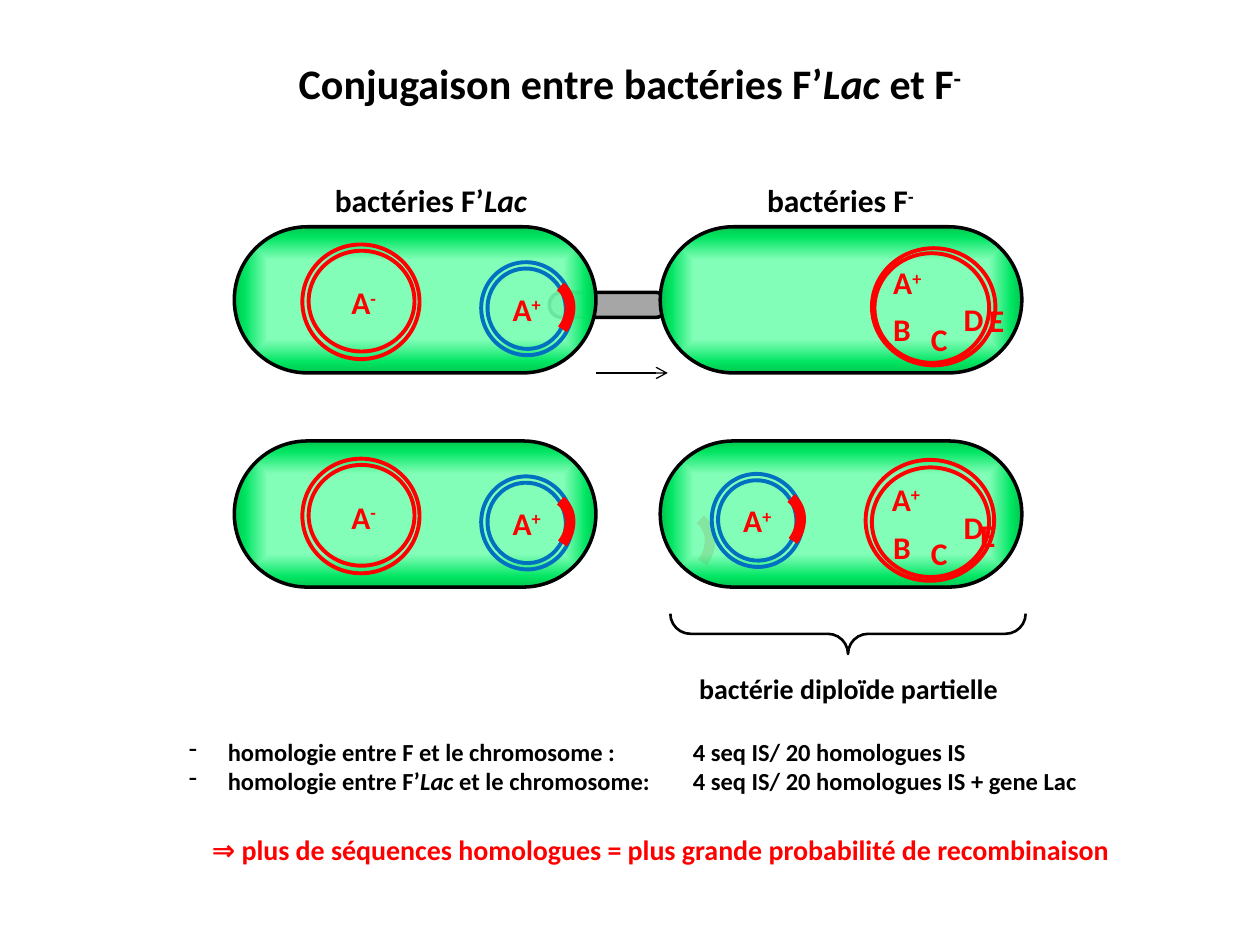
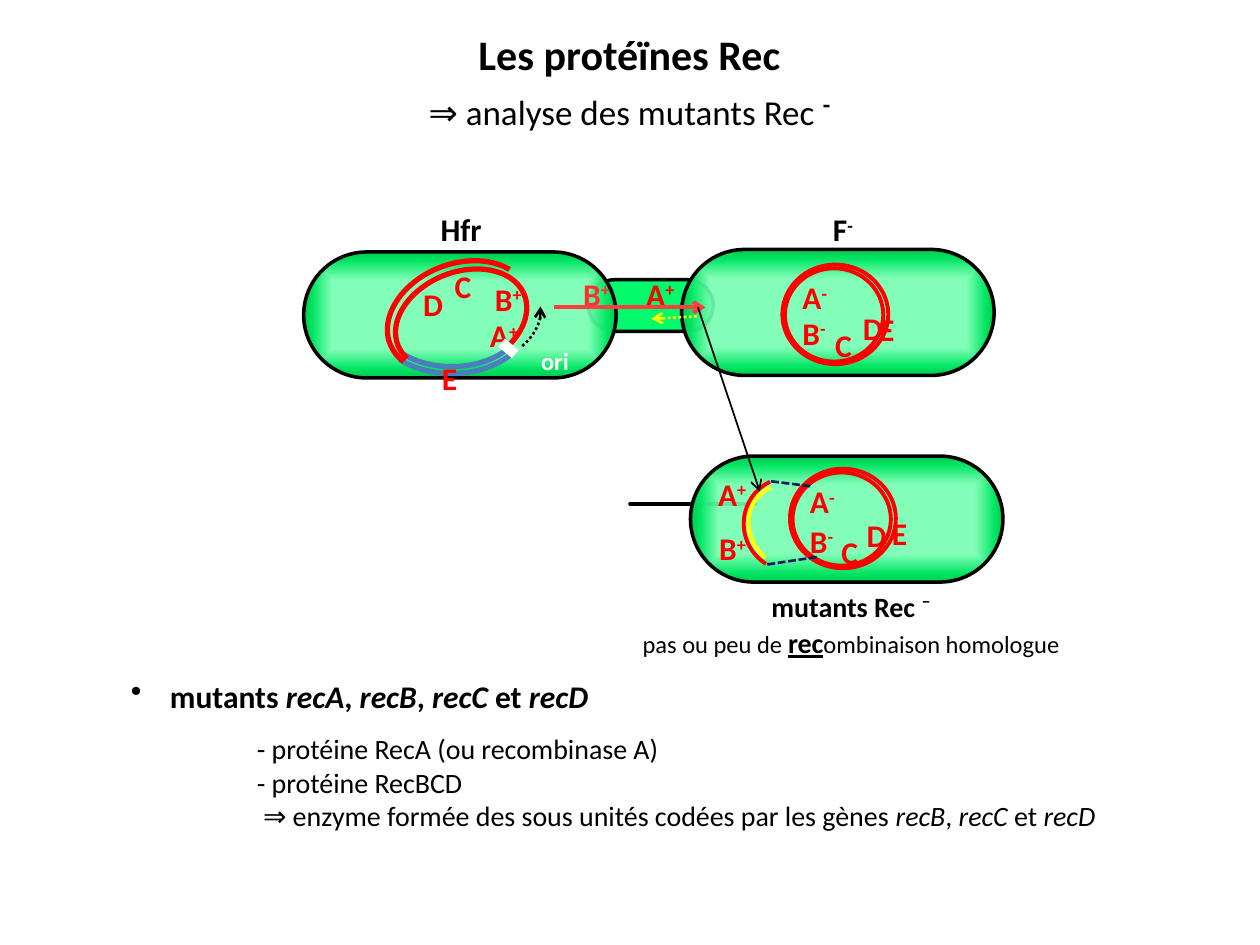
"""Build two slides on bacterial conjugation and Rec mutants."""
from pptx import Presentation
from pptx import util as u
from pptx.dml.color import RGBColor
from pptx.enum import dml, shapes, text
from pptx.oxml import parse_xml
from pptx.oxml.ns import qn
from lxml import etree

CELL = u.Inches(1)
COLS, ROWS = 10, 7.5
FONT = "Calibri"
BLACK = RGBColor(0x00, 0x00, 0x00)
WHITE = RGBColor(0xFF, 0xFF, 0xFF)
RED = RGBColor(0xFF, 0x00, 0x00)
PALE_RED = RGBColor(0xFF, 0x2F, 0x2F)
STRAND_RED = RGBColor(0xFF, 0x3F, 0x3F)
BLUE = RGBColor(0x00, 0x70, 0xC0)
STEEL = RGBColor(0x4B, 0x7E, 0xBC)
NAVY = RGBColor(0x00, 0x20, 0x60)
YELLOW = RGBColor(0xFF, 0xFF, 0x00)
GREY = RGBColor(0xA6, 0xA6, 0xA6)
GREEN = RGBColor(0x00, 0xFA, 0x6B)
CYTOPLASM = (
    '<a:gradFill xmlns:a="http://schemas.openxmlformats.org/drawingml/2006/main" rotWithShape="1"><a:gsLst>'
    '<a:gs pos="54000"><a:srgbClr val="77FFB2"><a:alpha val="90000"/></a:srgbClr></a:gs>'
    '<a:gs pos="85000"><a:srgbClr val="00E663"/></a:gs><a:gs pos="96000"><a:srgbClr val="00D054"/></a:gs>'
    '</a:gsLst><a:path path="shape"><a:fillToRect l="50000" t="50000" r="50000" b="50000"/></a:path></a:gradFill>')
OVAL, ARC, PILL, BRACE = (shapes.MSO_SHAPE.OVAL, shapes.MSO_SHAPE.ARC,
                          shapes.MSO_SHAPE.ROUNDED_RECTANGLE, shapes.MSO_SHAPE.LEFT_BRACE)
DOT, DASH = dml.MSO_LINE.ROUND_DOT, dml.MSO_LINE.SQUARE_DOT
LEFT, CENTER, JUSTIFY = text.PP_ALIGN.LEFT, text.PP_ALIGN.CENTER, text.PP_ALIGN.JUSTIFY
SUP, ITALIC = {"sup": True}, {"italic": True}


def write(s, box, *runs, tf=None, size=18, color=BLACK, bold=True, align=LEFT,
          bullet=None, margin=0, tab=None, before=0, spacing=None):
    """Write one paragraph in a new box, or after the others in tf."""
    if tf is None:
        tf = s.shapes.add_textbox(*[int(v * CELL) for v in box]).text_frame
        tf.word_wrap = True
        p = tf.paragraphs[0]
    else:
        p = tf.add_paragraph()
    pPr = p._p.get_or_add_pPr()
    if margin:
        pPr.set("marL", str(int(margin * CELL)))
    if bullet:
        pPr.set("indent", str(-int(margin * CELL)))
        etree.SubElement(pPr, qn("a:buChar")).set("char", bullet)
    if tab:
        stop = etree.SubElement(etree.SubElement(pPr, qn("a:tabLst")), qn("a:tab"))
        stop.set("pos", str(int(tab * CELL)))
        stop.set("algn", "l")
    p.alignment = align
    if before:
        p.space_before = u.Pt(before)
    if spacing:
        p.line_spacing = u.Pt(spacing)
    for run in runs:
        words, fmt = (run, {}) if isinstance(run, str) else run
        r = p.add_run()
        r.text = words
        r.font.name = FONT
        r.font.size = u.Pt(fmt.get("size", size))
        r.font.bold = fmt.get("bold", bold)
        r.font.italic = fmt.get("italic")
        r.font.underline = fmt.get("underline")
        r.font.color.rgb = color
        if fmt.get("sup"):
            r._r.get_or_add_rPr().set("baseline", "30000")
    return tf


def draw(s, kind, box, line=BLACK, width=2, fill=None, rot=0, adj=()):
    """Draw a preset shape; fill is a colour, CYTOPLASM or None."""
    sp = s.shapes.add_shape(kind, *[int(v * CELL) for v in box])
    sp.shadow.inherit = False
    sp.rotation = rot
    for i, value in enumerate(adj):
        sp.adjustments[i] = value
    sp.line.color.rgb = line
    sp.line.width = u.Pt(width)
    if isinstance(fill, RGBColor):
        sp.fill.solid()
        sp.fill.fore_color.rgb = fill
    else:
        sp.fill.background()
        if fill:
            spPr = sp._element.spPr
            spPr.replace(spPr.find(qn("a:noFill")), parse_xml(fill))
    return sp


prs = Presentation()
prs.slide_width, prs.slide_height = int(COLS * CELL), int(ROWS * CELL)
s1, s2 = [prs.slides.add_slide(prs.slide_layouts[6]) for _ in range(2)]

s = s1
draw(s, PILL, (4.36, 2.32, 0.94, 0.2), fill=GREY, adj=[0.5])
plasmids = []
for top in (1.8, 3.5):
    if top > 2:
        draw(s, ARC, (5.18, 4.07, 0.44, 0.52), RED, 6, rot=37.5)
    for left in (1.86, 5.24):
        draw(s, PILL, (left, top, 2.87, 1.16), fill=CYTOPLASM, adj=[0.5])
    draw(s, OVAL, (2.45, top + 0.19, 0.84, 0.8), RED, 2.25)
    draw(s, OVAL, (2.4, top + 0.14, 0.93, 0.91), RED, 2.25)
    write(s, (2.69, top + 0.4, 0.46, 0.39), "A", ("-", SUP), color=RED)
    plasmids.append((3.81, top + 0.29))
plasmids.append((5.64, 3.77))

for x, y in plasmids:
    draw(s, OVAL, (x, y, 0.74, 0.72), BLUE, 2.25, rot=252.1)
    draw(s, OVAL, (x + 0.05, y + 0.05, 0.64, 0.62), BLUE, 2.25, rot=252.1)
    write(s, (x + 0.16, y + 0.16, 0.47, 0.39), "A", ("+", SUP), color=RED)
    draw(s, ARC, (x + 0.26, y + 0.13, 0.44, 0.52), RED, 6, rot=37.5)

for box in ((6.94, 2.01, 0.91, 0.87), (6.92, 1.97, 0.98, 0.93),
            (6.92, 3.71, 0.93, 0.87), (6.87, 3.65, 1.02, 0.96)):
    draw(s, OVAL, box, RED, 2.25)

write(s, (2.43, 1.39, 1.98, 0.4), "bactéries F’", ("Lac", ITALIC), align=CENTER)
write(s, (5.68, 1.39, 1.98, 0.4), "bactéries F", ("-", SUP), align=CENTER)
draw(s, BRACE, (6.57, 3.62, 0.32, 2.82), width=1.5, rot=270, adj=[0.5, 0.5])
write(s, (5.39, 5.35, 2.69, 0.31), "bactérie diploïde partielle", size=16, align=CENTER, spacing=14)
write(s, (2, 0.41, 6, 0.5), "Conjugaison entre bactéries F’", ("Lac", ITALIC), " et F", ("-", SUP),
      size=24, align=CENTER)
listed = dict(size=14, align=JUSTIFY, bullet="-", margin=0.31, tab=4)
tf = write(s, (1.4, 5.8, 7.69, 1.13),
           "homologie entre F et le chromosome :\t4 seq IS/ 20 homologues IS", **listed)
write(s, None, "homologie entre F’", ("Lac", ITALIC),
      " et le chromosome:\t4 seq IS/ 20 homologues IS + gene Lac", tf=tf, **listed)
write(s, None, "⇒ plus de séquences homologues = plus grande probabilité de recombinaison",
      tf=tf, size=16, color=RED, align=CENTER, before=21)

s = s2
tf = write(s, (2.85, 0.18, 4.29, 0.89), "Les protéïnes Rec", size=24, align=CENTER)
write(s, None, "⇒ analyse des mutants Rec ", ("-", dict(size=24, bold=True, sup=True)),
      tf=tf, size=20, bold=False, align=CENTER, before=2.5)

pilus = [(5.52, 3.95), (5.53, 4.27), (5.31, 4.27), (5.17, 4.11), (5.32, 3.97)]
strand = [(4.04, 2.12), (4.15, 2.15), (4.19, 2.16), (4.21, 2.19), (4.24, 2.22), (4.25, 2.26),
          (4.26, 2.34), (4.32, 2.41), (4.44, 2.44)]
outlines = []
for points, closed in ((pilus, True), (strand, False)):
    fb = s.shapes.build_freeform(*points[0], scale=CELL)
    fb.add_line_segments(points[1:], close=closed)
    sp = fb.convert_to_shape()
    sp.shadow.inherit = False
    sp.line.color.rgb = BLACK if closed else RED
    sp.line.width = u.Pt(2 if closed else 2.25)
    if closed:
        sp.fill.solid()
        sp.fill.fore_color.rgb = GREEN
    else:
        sp.fill.background()
    outlines.append(sp)

draw(s, PILL, (4.67, 2.22, 0.99, 0.41), fill=GREEN, adj=[0.5])
for x, y in ((2.41, 2), (5.41, 1.98), (5.48, 3.62)):
    draw(s, PILL, (x, y, 2.48, 1), fill=CYTOPLASM, adj=[0.5])
s.shapes._spTree.append(outlines[1]._element)
for x, y in ((6.21, 2.1), (6.27, 3.72)):
    draw(s, OVAL, (x + 0.02, y + 0.03, 0.78, 0.74), RED, 2.25)
    draw(s, OVAL, (x, y, 0.84, 0.79), RED, 2.25)

for box, color, width, rot, adj in (
        ((3.15, 1.91, 0.87, 1.24), STEEL, 3, 90, (178.66, 31.18)),
        ((3.23, 2, 0.71, 1.11), STEEL, 3, 90, (175.63, 33.54)),
        ((3.28, 2, 0.76, 1.08), RED, 3, 248.2, (153.9, 87.44)),
        ((3.22, 1.93, 0.84, 1.17), RED, 3, 248.2, (151.54, 41.34)),
        ((5.92, 3.87, 0.69, 0.62), YELLOW, 2.25, 231.1, (153.83, 8.33)),
        ((5.9, 3.79, 0.75, 0.74), RED, 2.25, 231.1, (150.43, 7.8))):
    draw(s, ARC, box, color, width, rot=rot, adj=adj)
sp = draw(s, ARC, (3.97, 2.33, 0.28, 0.5), width=1.5, rot=35, adj=(171.32, 27.06))
sp.line.dash_style = DOT
etree.SubElement(sp.line._get_or_add_ln(), qn("a:headEnd")).set("type", "arrow")

loci = (
    (s1, [("A+", 6.99, 2.04), ("B", 6.99, 2.41), ("C", 7.29, 2.49), ("D", 7.55, 2.33), ("E", 7.75, 2.34),
          ("A+", 6.98, 3.76), ("B", 6.99, 4.14), ("C", 7.29, 4.19), ("D", 7.55, 3.98), ("E", 7.68, 4.05)]),
    (s2, [("B+", 3.83, 2.17), ("A+", 3.79, 2.46), ("C", 3.51, 2.07), ("D", 3.26, 2.21), ("E", 3.41, 2.8),
          ("A-", 6.27, 2.16), ("B-", 6.27, 2.44), ("C", 6.53, 2.54), ("D", 6.75, 2.4), ("E", 6.88, 2.41),
          ("A-", 6.33, 3.78), ("B-", 6.33, 4.09), ("C", 6.58, 4.18), ("D", 6.78, 4.05), ("E", 6.98, 4.03),
          ("A+", 5.6, 3.72), ("B+", 5.61, 4.15), ("A+", 5.03, 2.13)]))
for s, genes in loci:
    for gene, x, y in genes:
        runs = [gene[0]] + [(sign, SUP) for sign in gene[1:]]
        write(s, (x, y, 0.45 if gene[1:] else 0.27, 0.36), *runs, color=RED)

s = s2
write(s, (4.53, 2.13, 0.45, 0.37), "B", ("+", SUP), color=PALE_RED)
write(s, (4.13, 2.7, 0.55, 0.3), "ori T", size=14, color=WHITE, align=CENTER)
write(s, (3.3, 1.62, 0.72, 0.37), "Hfr", align=CENTER)
write(s, (6.34, 1.62, 0.7, 0.37), "F", ("-", SUP), align=CENTER)
tf = write(s, (4.74, 4.6, 4.03, 0.65), "mutants Rec ", ("–", dict(size=18, sup=True)), size=16, align=CENTER)
write(s, None, "pas ou peu de ", ("rec", dict(size=16, bold=True, underline=True)), "ombinaison homologue",
      tf=tf, size=14, bold=False, align=CENTER, before=1)

genes = [("recB", ITALIC), ", ", ("recC", ITALIC), " et ", ("recD", ITALIC)]
tf = write(s, (0.94, 5.32, 8.12, 1.62), "mutants ", ("recA", ITALIC), ", ", *genes, bullet="•", margin=0.31)
for runs, margin, before in ((["- protéine RecA (ou recombinase A)"], 1, 10),
                             (["- protéine RecBCD"], 1, 0),
                             (["⇒ enzyme formée des sous unités codées par les gènes ", *genes], 1.05, 0)):
    write(s, None, *runs, tf=tf, size=16, bold=False, margin=margin, before=before)

for s, ends, color, width, dash, arrow in (
        (s1, (4.73, 2.96, 5.3, 2.96), BLACK, 0.75, None, "a:tailEnd"),
        (s2, (3.98, 2.72, 4.09, 2.81), WHITE, 6, None, None),
        (s2, (6.09, 4.48, 6.49, 4.42), NAVY, 1.5, DASH, None),
        (s2, (6.12, 3.82, 6.44, 3.86), NAVY, 1.5, DASH, None),
        (s2, (4.4, 2.44, 5.6, 2.44), STRAND_RED, 2.25, None, "a:tailEnd"),
        (s2, (5.17, 2.53, 5.54, 2.51), YELLOW, 1.5, DOT, "a:headEnd"),
        (s2, (5.54, 2.44, 6.03, 3.9), BLACK, 1, None, "a:tailEnd")):
    cx = s.shapes.add_connector(shapes.MSO_CONNECTOR.STRAIGHT, *[int(v * CELL) for v in ends])
    cx.line.color.rgb = color
    cx.line.width = u.Pt(width)
    if dash:
        cx.line.dash_style = dash
    if arrow:
        etree.SubElement(cx.line._get_or_add_ln(), qn(arrow)).set("type", "arrow")
    etree.SubElement(cx._element.spPr, qn("a:effectLst"))

prs.save("out.pptx")
